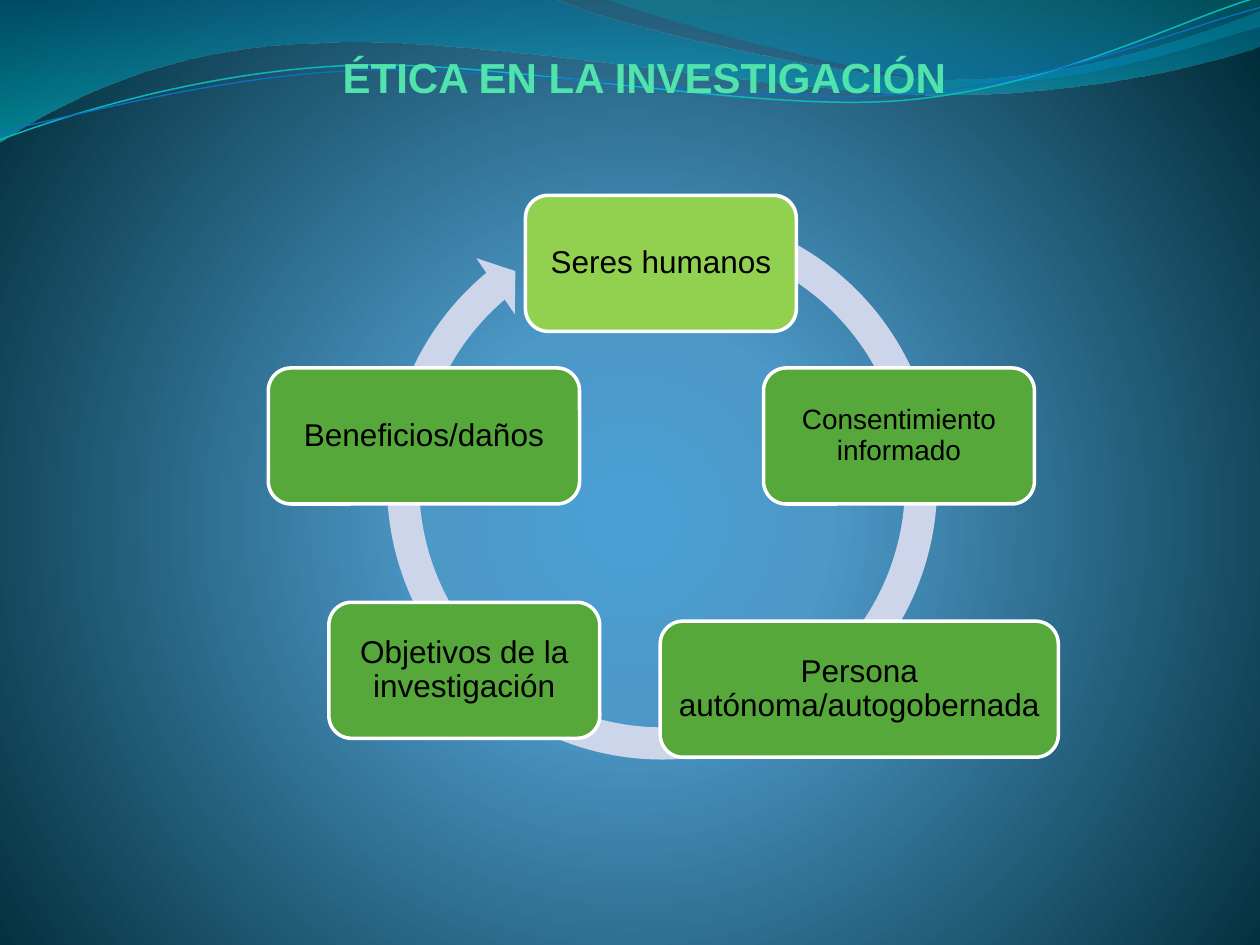
from dataclasses import dataclass
from typing import NamedTuple

from lxml import etree
from pptx import Presentation
from pptx.dml.color import RGBColor
from pptx.enum import shapes, text
from pptx.oxml.ns import qn
from pptx.util import Inches, Pt


@dataclass(frozen=True)
class Theme:
    font: str = "Arial"
    title: str = "50E3AC"
    ink: str = "000000"
    outline: str = "FFFFFF"
    ring: str = "CCD5EA"
    lead: str = "92D050"
    step: str = "55A839"
    title_size: int = 24
    step_size: int = 18
    small_size: int = 16


class Stop(NamedTuple):
    position: int
    color: str
    opacity: int = 100


class Step(NamedTuple):
    label: str
    left: float
    top: float
    width: float = 2.15
    color: str = Theme.step
    size: int = Theme.step_size


class Curve(NamedTuple):
    """Start point, then segments: 2 numbers for a line, 6 for a cubic."""
    start: tuple[float, float]
    segments: list[tuple[float, ...]]


class Wave(NamedTuple):
    curve: Curve
    stops: list[Stop]


class Strand(NamedTuple):
    curve: Curve
    color: str
    weight: float


THEME = Theme()
STEP_HEIGHT = 1.08
BACKGROUND = [Stop(0, "4AA0D6"), Stop(25, "4C98C7"), Stop(100, "002C38")]
WAVES = [
    Wave(Curve((0, 0), [
        (4.4, -0.01),
        (4.76, 0.17, 6.64, 0.63, 7.58, 0.63),
        (8.53, 0.63, 9.58, 0.26, 10, 0.09),
        (10.01, 0.36),
        (9.83, 0.44, 8.7, 0.76, 7.46, 0.75),
        (6.22, 0.75, 3.82, 0.28, 2.57, 0.34),
        (1.29, 0.36, 0.46, 0.83, -0.01, 1.13),
    ]), [Stop(0, "0074A1", 45), Stop(100, "00C6CF", 55)]),
    Wave(Curve((4.79, -0.01), [
        (5.09, 0.11, 6.82, 0.62, 7.69, 0.65),
        (8.56, 0.69, 9.61, 0.32, 10, 0.21),
        (10, 0),
    ]), [Stop(0, "00A1A9", 30), Stop(80, "008BBF", 45)]),
]
STRANDS = [
    Strand(Curve((0, 1.11), [
        (0.48, 0.93, 1.58, 0.57, 2.77, 0.52),
        (3.95, 0.47, 5.93, 0.89, 7.13, 0.8),
        (8.33, 0.71, 9.38, 0.15, 9.98, -0.02),
    ]), "0AB8BF", 0.85),
    Strand(Curve((0, 1.04), [
        (0.47, 0.96, 1.64, 0.61, 2.83, 0.56),
        (4.03, 0.51, 5.97, 0.84, 7.17, 0.75),
        (8.36, 0.67, 9.41, 0.21, 10, 0.06),
    ]), "0F6FC6", 0.75),
]
STEPS = [
    Step("Seres humanos", 4.17, 1.55, color=THEME.lead),
    Step("Consentimiento informado", 6.06, 2.92, size=THEME.small_size),
    Step("Persona autónoma/autogobernada", 5.24, 4.93, width=3.16),
    Step("Objetivos de la investigación", 2.61, 4.78),
    Step("Beneficios/daños", 2.13, 2.92, width=2.47),
]


def rgb(color: str) -> RGBColor:
    return RGBColor.from_string(color)


def set_gradient(grad, stops: list[Stop], center: dict | None = None) -> None:
    """Refill a gradFill: circular around center, or else from top to bottom."""
    for child in list(grad):
        grad.remove(child)
    stop_list = etree.SubElement(grad, qn("a:gsLst"))
    for stop in stops:
        gs = etree.SubElement(stop_list, qn("a:gs"), pos=str(stop.position * 1000))
        clr = etree.SubElement(gs, qn("a:srgbClr"), val=stop.color)
        if stop.opacity < 100:
            etree.SubElement(clr, qn("a:alpha"), val=str(stop.opacity * 1000))
    if center:
        circle = etree.SubElement(grad, qn("a:path"), path="circle")
        etree.SubElement(circle, qn("a:fillToRect"), **center)
    else:
        etree.SubElement(grad, qn("a:lin"), ang="5400000", scaled="1")


def add_curve(s, curve: Curve, close: bool):
    """Join the segment ends by lines, then bend those that are cubics."""
    builder = s.shapes.build_freeform(*map(Inches, curve.start))
    builder.add_line_segments([tuple(map(Inches, seg[-2:])) for seg in curve.segments],
                              close=close)
    sp = builder.convert_to_shape()
    sp.shadow.inherit = False
    lines = list(sp._element.iter(qn("a:lnTo")))
    for line, seg in zip(lines, curve.segments):
        if len(seg) == 2:
            continue
        cubic = etree.Element(qn("a:cubicBezTo"))
        for x, y in zip(seg[::2], seg[1::2]):
            etree.SubElement(cubic, qn("a:pt"), x=str(Inches(x) - sp.left),
                             y=str(Inches(y) - sp.top))
        line.getparent().replace(line, cubic)
    return sp


def add_wave(s, wave: Wave) -> None:
    sp = add_curve(s, wave.curve, close=True)
    sp.line.fill.background()
    sp.fill.gradient()
    set_gradient(sp._element.spPr.find(qn("a:gradFill")), wave.stops)


def add_strand(s, strand: Strand) -> None:
    sp = add_curve(s, strand.curve, close=False)
    sp.fill.background()
    sp.line.color.rgb = rgb(strand.color)
    sp.line.width = Pt(strand.weight)


def set_text(tf, label: str, size: int, color: str, margin: float, bold: bool = False):
    tf.word_wrap = True
    tf.margin_left = tf.margin_right = tf.margin_top = tf.margin_bottom = Inches(margin)
    p = tf.paragraphs[0]
    p.text = label
    p.alignment = text.PP_ALIGN.CENTER
    p.font.name, p.font.size, p.font.bold = THEME.font, Pt(size), bold
    p.font.color.rgb = rgb(color)
    return p


def add_title(s, label: str) -> None:
    sp = s.shapes.title
    sp.left, sp.top, sp.width, sp.height = map(Inches, (0.43, 0.21, 9.37, 0.6))
    tf = sp.text_frame
    set_text(tf, label, THEME.title_size, THEME.title, 0, bold=True)
    tf.auto_size = text.MSO_AUTO_SIZE.NONE
    tf.vertical_anchor = text.MSO_ANCHOR.BOTTOM
    s.shapes._spTree.append(sp._element)  # in front of the waves


def add_ring(s) -> None:
    sp = s.shapes.add_shape(shapes.MSO_SHAPE.CIRCULAR_ARROW, Inches(2.93), Inches(1.52),
                            Inches(4.65), Inches(4.65))
    for i, value in enumerate((0.055, 3.307, 137.981, 173.725, 0.058)):
        sp.adjustments[i] = value
    sp.shadow.inherit = False
    sp.fill.solid()
    sp.fill.fore_color.rgb = rgb(THEME.ring)
    sp.line.fill.background()


def add_step(s, step: Step) -> None:
    sp = s.shapes.add_shape(shapes.MSO_SHAPE.ROUNDED_RECTANGLE, Inches(step.left),
                            Inches(step.top), Inches(step.width), Inches(STEP_HEIGHT))
    sp.shadow.inherit = False
    sp.fill.solid()
    sp.fill.fore_color.rgb = rgb(step.color)
    sp.line.color.rgb = rgb(THEME.outline)
    sp.line.width = Pt(2)
    p = set_text(sp.text_frame, step.label, step.size, THEME.ink, 0.07)
    p.line_spacing = 0.9
    sp.text_frame.vertical_anchor = text.MSO_ANCHOR.MIDDLE


def main() -> None:
    prs = Presentation()
    prs.slide_width, prs.slide_height = Inches(10), Inches(7.5)
    s = prs.slides.add_slide(prs.slide_layouts.get_by_name("Title Only"))
    s.background.fill.gradient()
    set_gradient(next(s._element.iter(qn("a:gradFill"))), BACKGROUND,
                 {"l": "10000", "t": "110000", "r": "10000", "b": "100000"})
    for wave in WAVES:
        add_wave(s, wave)
    for strand in STRANDS:
        add_strand(s, strand)
    add_title(s, "ÉTICA EN LA INVESTIGACIÓN")
    add_ring(s)
    for step in STEPS:
        add_step(s, step)
    prs.save("out.pptx")


if __name__ == "__main__":
    main()
